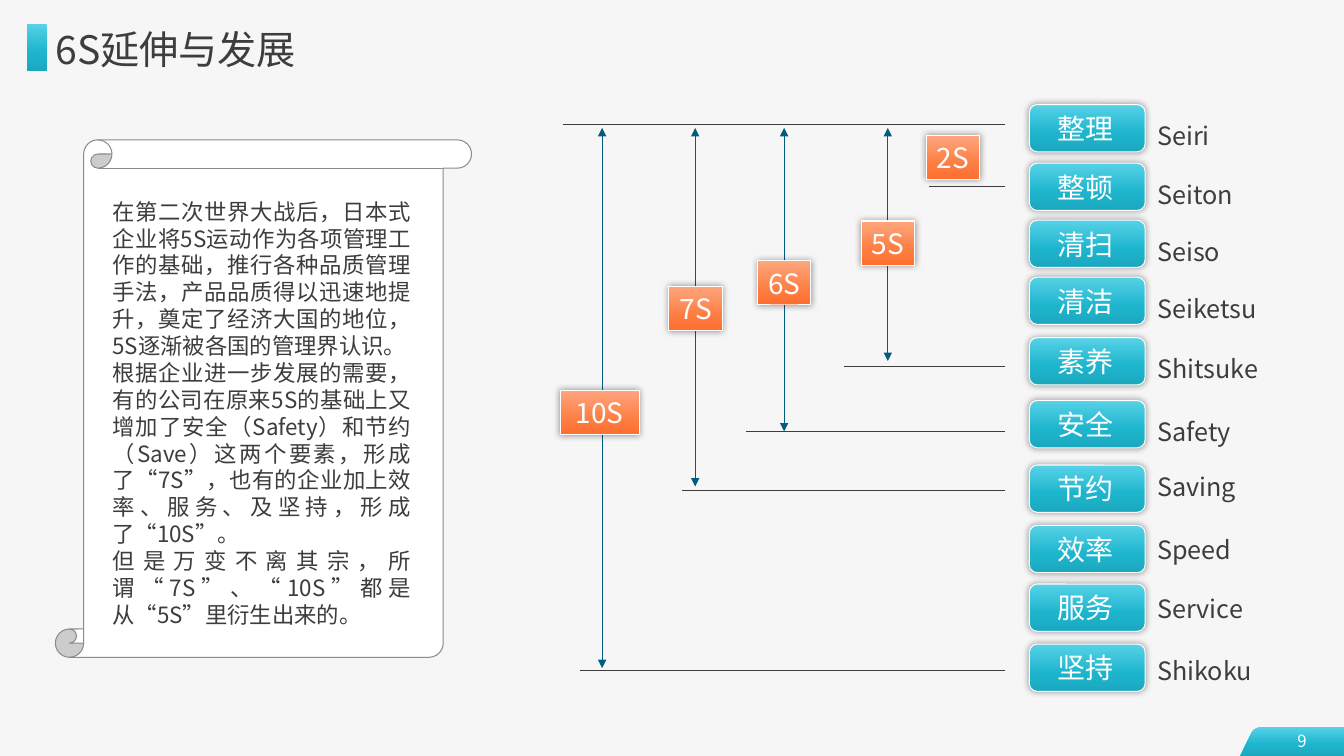
import pptx
import pptx.util
import pptx.dml.color
import pptx.enum.dml
import pptx.enum.shapes
import pptx.enum.text
import pptx.oxml
import pptx.oxml.ns
from lxml import etree

Pt = pptx.util.Pt
SHAPE = pptx.enum.shapes.MSO_SHAPE
ALIGN = pptx.enum.text.PP_ALIGN
ANCHOR = pptx.enum.text.MSO_ANCHOR
qn = pptx.oxml.ns.qn

# Content
FONT = "Noto Sans CJK SC"
DARK, WHITE, NAVY = "3D3D3D", "FFFFFF", "005D7F"
TEAL = [(0, "57D2E7"), (60, "1DB5CD"), (100, "1BA8BF")]
ORANGE = [(0, "FEA67E"), (70, "FD7B3F"), (100, "FD6F2F")]

TITLE = "6S延伸与发展"
STORY = [
    "在第二次世界大战后，日本式企业将5S运动作为各项管理工作的基础，推行各种品质管理手法，"
    "产品品质得以迅速地提升，奠定了经济大国的地位，5S逐渐被各国的管理界认识。",
    "根据企业进一步发展的需要，有的公司在原来5S的基础上又增加了安全（Safety）和节约（Save）"
    "这两个要素，形成了“7S”，也有的企业加上效率、服务、及坚持，形成了“10S”。",
    "但是万变不离其宗，所谓“7S”、“10S”都是从“5S”里衍生出来的。",
]
# Chinese, romanised, pill top, label top, label width
ITEMS = [
    ("整理", "Seiri", 74.7, 82.5, 51.8),
    ("整顿", "Seiton", 116.6, 124.6, 69.8),
    ("清扫", "Seiso", 157.3, 165.2, 60.5),
    ("清洁", "Seiketsu", 198, 205.9, 86.4),
    ("素养", "Shitsuke", 241.2, 249.1, 87.1),
    ("安全", "Safety", 286.1, 293.8, 68.4),
    ("节约", "Saving", 332.2, 332.9, 72),
    ("效率", "Speed", 375.3, 378, 69.1),
    ("服务", "Service", 417.2, 420.5, 77),
    ("坚持", "Shikoku", 460.1, 464.4, 83.5),
]
# Name, badge left, top, width, level line left, level line y, arrow (x, end y)
LEVELS = [
    ("2S", 662, 96.5, 38.2, 663.8, 133.2, None),
    ("5S", 615.6, 157.9, 38.2, 603.4, 262.1, (634.5, 257.8)),
    ("6S", 541.4, 186.2, 38.2, 533, 308.2, (560.4, 308.2)),
    ("7S", 478.1, 204.5, 38.2, 487.4, 350.2, (496.8, 347.5)),
    ("10S", 400.3, 278.9, 56.6, 414.3, 478.8, (430.3, 477.2)),
]
TOP_LINE_LEFT, TOP_LINE_Y, LINES_RIGHT, ARROW_TOP = 402.5, 89, 718.1, 91.4

prs = pptx.Presentation()
prs.slide_width, prs.slide_height = Pt(960.5), Pt(540)
s = prs.slides.add_slide(prs.slide_layouts[6])


def rgb(value):
    return pptx.dml.color.RGBColor.from_string(value)


def write(sp, text, size=20, color=WHITE, align=ALIGN.LEFT, anchor=ANCHOR.TOP,
          wrap=True, margins=(7.2, 3.6, 7.2, 3.6)):
    tf = sp.text_frame
    tf.word_wrap, tf.vertical_anchor = wrap, anchor
    tf.margin_left, tf.margin_top, tf.margin_right, tf.margin_bottom = map(Pt, margins)
    for i, line in enumerate([text] if isinstance(text, str) else text):
        p = tf.add_paragraph() if i else tf.paragraphs[0]
        p.alignment, p.line_spacing = align, Pt(size * 1.2)
        p._p.get_or_add_pPr().set("hangingPunct", "0")
        r = p.add_run()
        r.text = line
        r.font.size, r.font.name = Pt(size), FONT
        r.font.color.rgb = rgb(color)
        etree.SubElement(r.font._element, qn("a:ea"), typeface=FONT)


def text_box(x, y, w, h, text, **fmt):
    write(s.shapes.add_textbox(Pt(x), Pt(y), Pt(w), Pt(h)), text, **fmt)


def paint(sp, fill, line=None, glow=False):
    """A list of stops gives a vertical gradient, a string a plain fill."""
    sp.shadow.inherit = False
    if isinstance(fill, str):
        sp.fill.solid()
        sp.fill.fore_color.rgb = rgb(fill)
    else:
        sp.fill.gradient()
        sp.fill.gradient_angle = 270
        stops = sp._element.spPr.find(".//" + qn("a:gsLst"))
        for old in list(stops):
            stops.remove(old)
        for pos, color in fill:
            gs = etree.SubElement(stops, qn("a:gs"), pos=str(pos * 1000))
            etree.SubElement(gs, qn("a:srgbClr"), val=color)
    if line:
        sp.line.color.rgb = rgb(line)
        sp.line.width = Pt(0.75)
    else:
        sp.line.fill.background()
    if glow:
        effects = sp._element.spPr.find(qn("a:effectLst"))
        shadow = etree.SubElement(effects, qn("a:outerShdw"), blurRad=str(Pt(5)),
                                  dist="0", dir="0", algn="ctr", rotWithShape="0")
        color = etree.SubElement(shadow, qn("a:srgbClr"), val="000000")
        etree.SubElement(color, qn("a:alpha"), val="40000")


def shape(kind, x, y, w, h, fill, **look):
    sp = s.shapes.add_shape(kind, Pt(x), Pt(y), Pt(w), Pt(h))
    paint(sp, fill, **look)
    return sp


def connect(x1, y1, x2, y2, color, arrows=False):
    c = s.shapes.add_connector(pptx.enum.shapes.MSO_CONNECTOR.STRAIGHT,
                               Pt(x1), Pt(y1), Pt(x2), Pt(y2))
    c.line.color.rgb = rgb(color)
    c.line.width = Pt(0.75)
    if arrows:
        for end in ("a:headEnd", "a:tailEnd"):
            etree.SubElement(c.line._get_or_add_ln(), qn(end), type="triangle")
    etree.SubElement(c._element.spPr, qn("a:effectLst"))


# Background and page number tab
s.background.fill.solid()
s.background.fill.fore_color.rgb = rgb("F6F6F6")
outline = [(902.2, 519.1), (898.6, 519.8), (896.2, 521.2), (894.8, 522.9),
           (886.3, 540.5), (960.5, 540.5)]
fb = s.shapes.build_freeform(Pt(960.5), Pt(519.1))
fb.add_line_segments([(Pt(x), Pt(y)) for x, y in outline], close=True)
paint(fb.convert_to_shape(), TEAL)
text_box(915.4, 518.4, 30.2, 21.6, "9", size=12, align=ALIGN.CENTER, wrap=False)

# Title
text_box(39.6, 18, 498.2, 33.8, TITLE, size=28, color=DARK, margins=(0, 0, 0, 0))
shape(SHAPE.RECTANGLE, 19.4, 16.9, 14, 33.8, TEAL)

# Scroll with story
scroll = shape(SHAPE.VERTICAL_SCROLL, 39.6, 99.9, 297.4, 369.6, WHITE, line="8B8B8B")
scroll.adjustments[0] = 0.068
text_box(73.4, 137.8, 227.5, 317.5, STORY, size=16, color=DARK, align=ALIGN.JUSTIFY)

# Pills and romanised labels
for name, label, pill_y, label_y, label_w in ITEMS:
    pill = shape(SHAPE.ROUNDED_RECTANGLE, 735.6, pill_y, 82.8, 33.8, TEAL,
                 line=WHITE, glow=True)
    write(pill, name, align=ALIGN.CENTER, anchor=ANCHOR.MIDDLE, margins=(4, 0, 7, 0))
    text_box(820, label_y, label_w, 28.8, label, size=18, color=DARK, wrap=False)

# Level lines, arrows and badges
connect(LINES_RIGHT, TOP_LINE_Y, TOP_LINE_LEFT, TOP_LINE_Y, DARK)
for name, x, y, w, line_x, line_y, arrow in LEVELS:
    connect(LINES_RIGHT, line_y, line_x, line_y, DARK)
    if arrow:
        connect(arrow[0], ARROW_TOP, *arrow, NAVY, arrows=True)
    badge = shape(SHAPE.RECTANGLE, x, y, w, 31.7, ORANGE, line=WHITE, glow=True)
    write(badge, name, align=ALIGN.CENTER, anchor=ANCHOR.MIDDLE)

prs.save("out.pptx")
